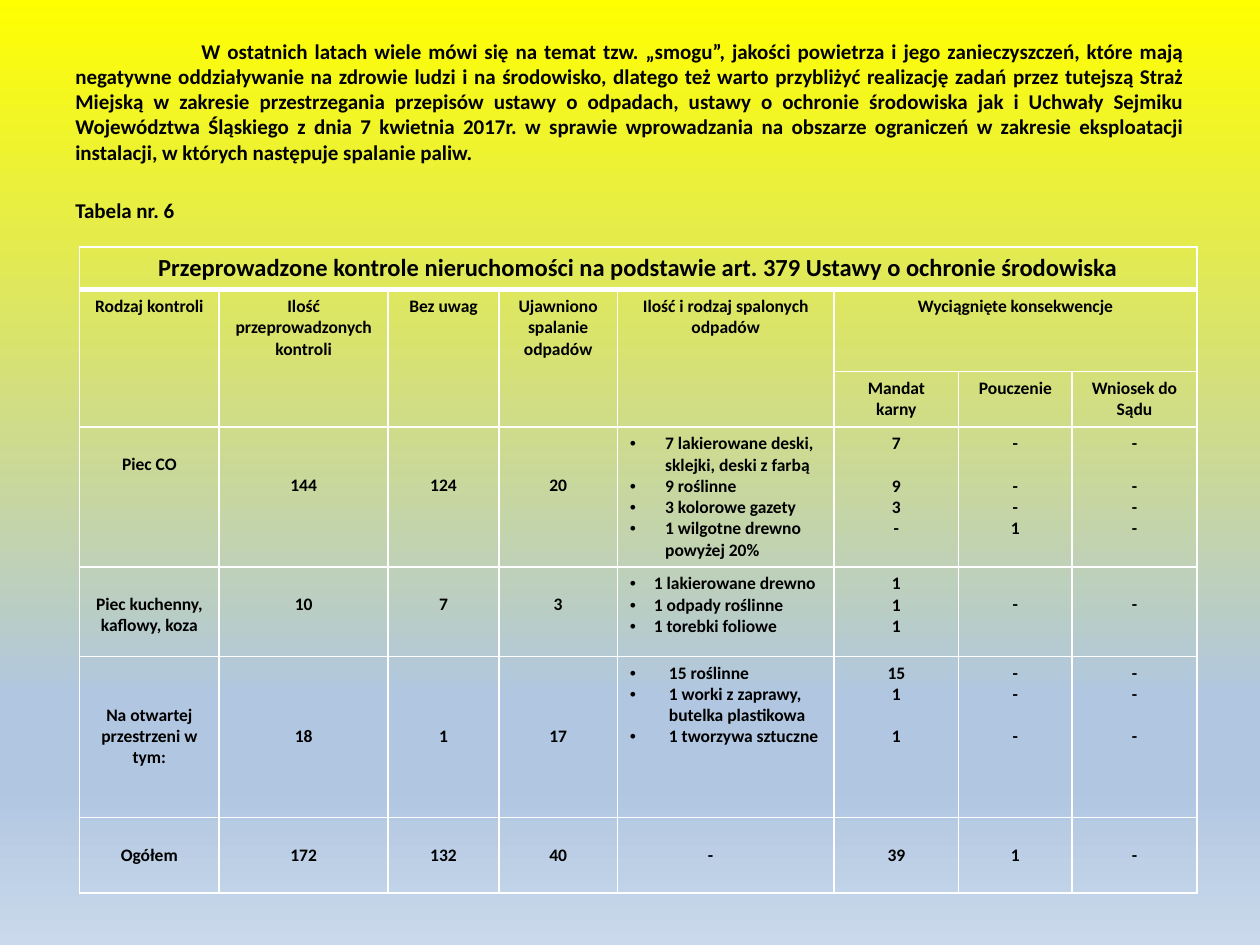
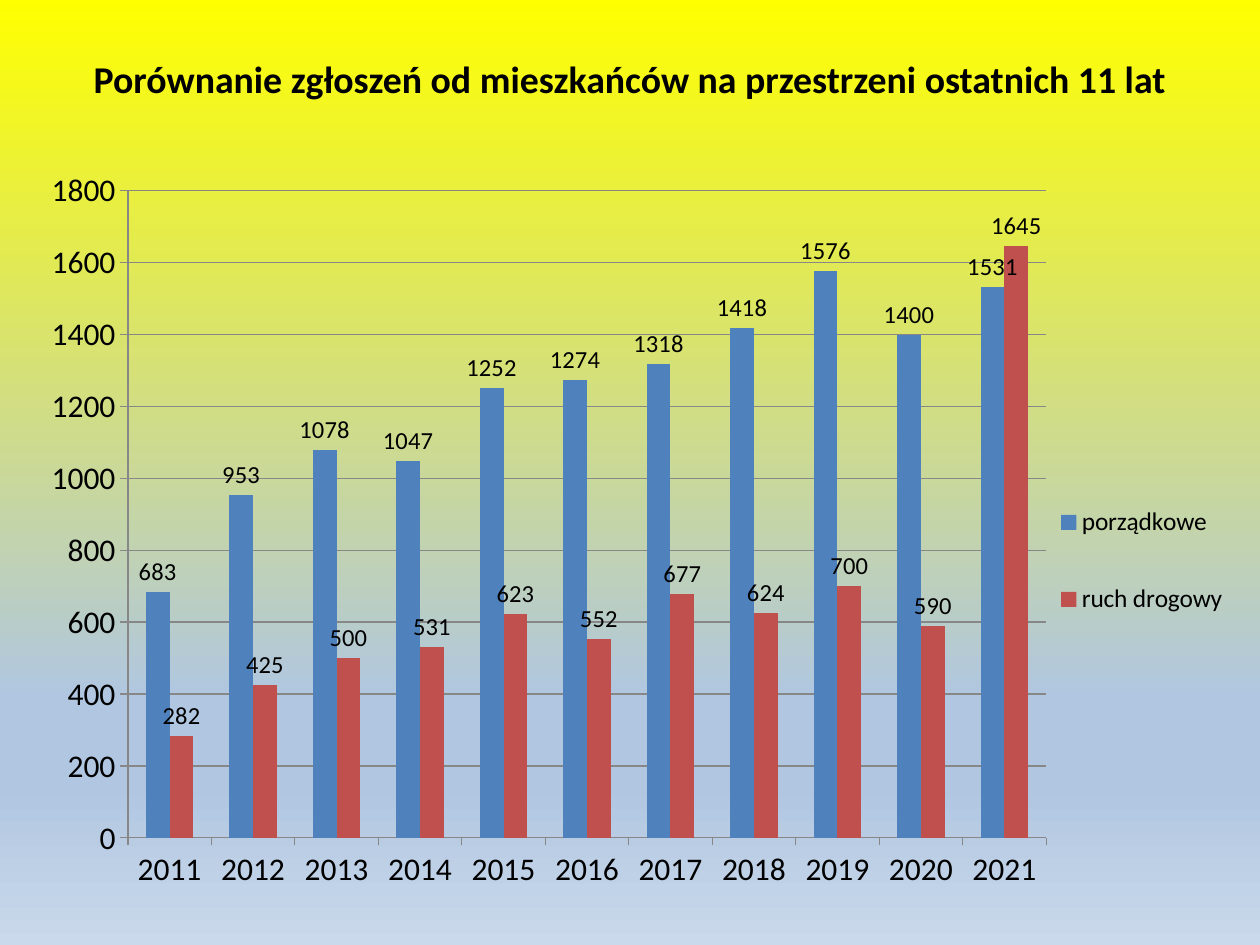
from lxml import etree
from pptx import Presentation
from pptx.chart.data import CategoryChartData
from pptx.dml.color import RGBColor
from pptx.enum.chart import XL_CHART_TYPE, XL_LABEL_POSITION, XL_LEGEND_POSITION, XL_TICK_MARK
from pptx.enum.text import MSO_ANCHOR, PP_ALIGN
from pptx.oxml.ns import qn
from pptx.util import Inches, Pt

CLUSTERED = XL_CHART_TYPE.COLUMN_CLUSTERED
OUTSIDE_END = XL_LABEL_POSITION.OUTSIDE_END
LEGEND_RIGHT = XL_LEGEND_POSITION.RIGHT
TICK_OUT = XL_TICK_MARK.OUTSIDE
MIDDLE = MSO_ANCHOR.MIDDLE
LEFT, CENTER, JUSTIFY = PP_ALIGN.LEFT, PP_ALIGN.CENTER, PP_ALIGN.JUSTIFY

COLORS = {
    "text": "000000", "border": "FFFFFF", "grid": "878787",
    "yellow": "FFFF00", "blue": "B0C6E1", "pale": "CAD9EB",
    "porządkowe": "4F81BD", "ruch drogowy": "C0504D",
}
FONT = "Calibri"
W, H = 10, 7.5
MARGIN = W * 0.05
LINE = 12


def add_run(p, text, size):
    r = p.add_run()
    r.text = text
    r.font.name = FONT
    r.font.size = Pt(size)
    r.font.bold = True
    r.font.color.rgb = RGBColor.from_string(COLORS["text"])


def set_layout(parent, index, box, inner=False):
    for old in parent.findall(qn("c:layout")):
        parent.remove(old)
    layout = etree.Element(qn("c:layout"))
    manual = etree.SubElement(layout, qn("c:manualLayout"))
    settings = [("layoutTarget", "inner")] if inner else []
    settings += [("xMode", "edge"), ("yMode", "edge")] + list(zip("xywh", box))
    for tag, value in settings:
        etree.SubElement(manual, qn("c:" + tag)).set("val", str(value))
    parent.insert(index, layout)


prs = Presentation()
prs.slide_width, prs.slide_height = Inches(W), Inches(H)
blank = prs.slide_layouts[6]

master = prs.slide_master
master.background.fill.gradient()
grad = master.element.find(".//" + qn("p:bgPr")).find(qn("a:gradFill"))
for child in list(grad):
    grad.remove(child)
stops = etree.SubElement(grad, qn("a:gsLst"))
for pos, name in [(0, "yellow"), (74, "blue"), (83, "blue"), (100, "pale")]:
    gs = etree.SubElement(stops, qn("a:gs"), pos=str(pos * 1000))
    etree.SubElement(gs, qn("a:srgbClr"), val=COLORS[name])
etree.SubElement(grad, qn("a:lin"), ang="5400000", scaled="0")

s = prs.slides.add_slide(blank)
sp = s.shapes.add_textbox(Inches(MARGIN), Inches(H * 0.03), Inches(W * 0.9), Inches(H * 0.9))
tf = sp.text_frame
tf.word_wrap = True
tf.margin_top = Inches(0.08)
p = tf.paragraphs[0]
p.alignment = JUSTIFY
p._p.get_or_add_pPr().set("indent", str(Inches(1)))
add_run(p, "W ostatnich latach wiele mówi się na temat tzw. „smogu”, jakości powietrza "
           "i jego zanieczyszczeń, które mają negatywne oddziaływanie na zdrowie ludzi "
           "i na środowisko, dlatego też warto przybliżyć realizację zadań przez tutejszą "
           "Straż Miejską w zakresie przestrzegania przepisów ustawy o odpadach, ustawy "
           "o ochronie środowiska jak i Uchwały Sejmiku Województwa Śląskiego z dnia "
           "7 kwietnia 2017r. w sprawie wprowadzania na obszarze ograniczeń w zakresie "
           "eksploatacji instalacji, w których następuje spalanie paliw.", 12)
p = tf.add_paragraph()
p.space_before = Pt(19)
add_run(p, "Tabela nr. 6", 12)

COLS = [1.11, 1.34, 0.88, 0.94, 1.72, 0.99, 0.9, 0.99]
ROWS = [0.34, 0.65, 0.44, 1.11, 0.71, 1.28, 0.6]
CELLS = [
    ["Przeprowadzone kontrole nieruchomości na podstawie art. 379 Ustawy o ochronie środowiska"],
    ["Rodzaj kontroli", "Ilość przeprowadzonych kontroli", "Bez uwag",
     "Ujawniono spalanie odpadów", "Ilość i rodzaj spalonych odpadów",
     "Wyciągnięte konsekwencje"],
    ["", "", "", "", "", "Mandat karny", "Pouczenie", "Wniosek do Sądu"],
    ["\nPiec CO", "\n\n144", "\n\n124", "\n\n20",
     "7 lakierowane deski, sklejki, deski z farbą\n9 roślinne\n3 kolorowe gazety\n"
     "1 wilgotne drewno powyżej 20%",
     "7\n\n9\n3\n-", "-\n\n-\n-\n1", "-\n\n-\n-\n-"],
    ["\nPiec kuchenny, kaflowy, koza", "\n10", "\n7", "\n3",
     "1 lakierowane drewno\n1 odpady roślinne\n1 torebki foliowe", "1\n1\n1", "\n-", "\n-"],
    ["\n\nNa otwartej przestrzeni w tym:", "\n\n\n18", "\n\n\n1", "\n\n\n17",
     "15 roślinne\n1 worki z zaprawy, butelka plastikowa\n1 tworzywa sztuczne",
     "15\n1\n\n1", "-\n-\n\n-", "-\n-\n\n-"],
    ["\nOgółem", "\n172", "\n132", "\n40", "\n-", "\n39", "\n1", "\n-"],
]
SPANS = [(0, 0, 0, 7), (1, 5, 1, 7)] + [(1, c, 2, c) for c in range(5)]
WASTE_COL = 4
WASTE_INDENT = {3: 0.28, 4: 0.19, 5: 0.31}

frame = s.shapes.add_table(len(ROWS), len(COLS), Inches(0.63), Inches(1.96),
                           Inches(sum(COLS)), Inches(sum(ROWS)))
table = frame.table
table.first_row = table.horz_banding = False
for col, width in zip(table.columns, COLS):
    col.width = Inches(width)
for row, height in zip(table.rows, ROWS):
    row.height = Inches(height)
for top, left, bottom, right in SPANS:
    table.cell(top, left).merge(table.cell(bottom, right))

for i in range(len(ROWS)):
    for j in range(len(COLS)):
        cell = table.cell(i, j)
        cell.fill.background()
        tcPr = cell._tc.get_or_add_tcPr()
        for k, side in enumerate(["lnL", "lnR", "lnT", "lnB"]):
            thick = (i, side) in [(0, "lnB"), (1, "lnT")]
            ln = etree.Element(qn("a:" + side), w=str(Pt(3 if thick else 1)))
            fill = etree.SubElement(ln, qn("a:solidFill"))
            etree.SubElement(fill, qn("a:srgbClr"), val=COLORS["border"])
            tcPr.insert(k, ln)
        text = CELLS[i][j] if j < len(CELLS[i]) else ""
        if not text:
            continue
        lines = text.lstrip("\n")
        cell.margin_top = Inches(0.05) + Pt(LINE * (len(text) - len(lines)))
        tf = cell.text_frame
        p, gap = tf.paragraphs[0], 0
        for n, line in enumerate(lines.split("\n")):
            if not line:
                gap += LINE
                continue
            if n:
                p = tf.add_paragraph()
            p.space_before, gap = Pt(gap), 0
            p.alignment = CENTER
            if j == WASTE_COL and i in WASTE_INDENT:
                p.alignment = LEFT
                pPr = p._p.get_or_add_pPr()
                indent = Inches(WASTE_INDENT[i])
                pPr.set("marL", str(indent))
                pPr.set("indent", str(-indent))
                etree.SubElement(pPr, qn("a:buFont"), typeface="Arial")
                etree.SubElement(pPr, qn("a:buChar"), char="•")
            add_run(p, line, 14 if i == 0 else 10)

total = table.cell(len(ROWS) - 1, WASTE_COL)
total.margin_left = Inches(0.72)
total.text_frame.paragraphs[0].alignment = LEFT

s = prs.slides.add_slide(blank)
sp = s.shapes.add_textbox(Inches(MARGIN), Inches(H * 0.04), Inches(W * 0.9), Inches(0.64))
tf = sp.text_frame
tf.word_wrap = True
tf.vertical_anchor = MIDDLE
p = tf.paragraphs[0]
p.alignment = CENTER
add_run(p, "Porównanie zgłoszeń od mieszkańców na przestrzeni ostatnich 11 lat", 21.6)

data = CategoryChartData()
data.categories = [str(year) for year in range(2011, 2022)]
data.add_series("porządkowe", [683, 953, 1078, 1047, 1252, 1274, 1318, 1418, 1576, 1400, 1531])
data.add_series("ruch drogowy", [282, 425, 500, 531, 623, 552, 677, 624, 700, 590, 1645])
chart = s.shapes.add_chart(CLUSTERED, Inches(0.19), Inches(1.29),
                           Inches(9.59), Inches(5.91), data).chart
chart.has_title = False
chart.font.name = FONT
chart.font.size = Pt(18)
chart.font.color.rgb = RGBColor.from_string(COLORS["text"])

grid = RGBColor.from_string(COLORS["grid"])
values = chart.value_axis
values.minimum_scale, values.maximum_scale, values.major_unit = 0, 1800, 200
values.has_major_gridlines = True
values.major_gridlines.format.line.color.rgb = grid
for axis in (chart.category_axis, values):
    axis.major_tick_mark = TICK_OUT
    axis.format.line.color.rgb = grid

plot = chart.plots[0]
plot.gap_width = 150
plot.overlap = 0
plot.vary_by_categories = False
for series in plot.series:
    series.format.fill.solid()
    series.format.fill.fore_color.rgb = RGBColor.from_string(COLORS[series.name])
    labels = series.data_labels
    labels.show_value = True
    labels.position = OUTSIDE_END
    labels.font.size = Pt(14)
    labels.font.color.rgb = RGBColor.from_string(COLORS["text"])

chart.has_legend = True
legend = chart.legend
legend.position = LEGEND_RIGHT
legend.include_in_layout = False
legend.font.size = Pt(14.5)
chart_xml = chart.element
set_layout(chart_xml.find(".//" + qn("c:plotArea")), 0, (0.086, 0.038, 0.76, 0.869), True)
set_layout(chart_xml.find(".//" + qn("c:legend")), 1, (0.85, 0.4, 0.15, 0.27))

prs.save("out.pptx")
